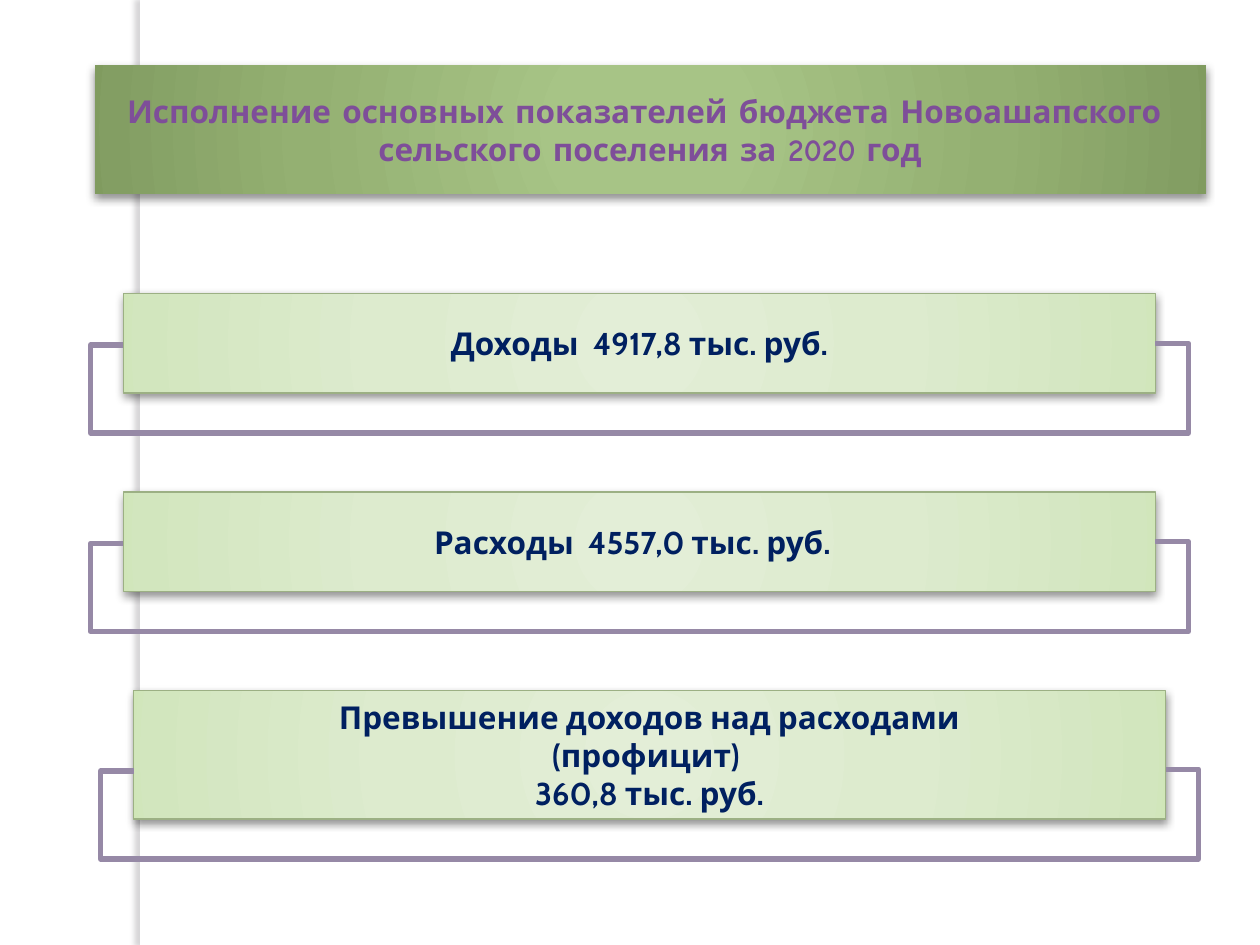
"""Build the budget execution slide: a title banner and three linked figure bars."""
from lxml.etree import SubElement
from pptx import Presentation
from pptx.dml.color import RGBColor
from pptx.enum.shapes import MSO_CONNECTOR, MSO_SHAPE
from pptx.enum.text import MSO_ANCHOR, PP_ALIGN
from pptx.oxml import parse_xml
from pptx.oxml.ns import nsdecls, qn
from pptx.util import Inches, Pt


def color(value):
    return RGBColor.from_string(value)


def add_panel(box, stops, shadow, lines=(), font_name=None, font_color=None, border=None):
    left, top, width, height = box
    shape = slide.shapes.add_shape(
        MSO_SHAPE.RECTANGLE, int(left * column), int(top * row), int(width * column), int(height * row))
    shape.fill.background()
    properties = shape._element.spPr
    gradient = "".join(
        f'<a:gs pos="{position * 1000}"><a:srgbClr val="{value}"/></a:gs>' for position, value in stops)
    properties.replace(properties.find(qn("a:noFill")), parse_xml(
        f'<a:gradFill {nsdecls("a")} rotWithShape="1"><a:gsLst>{gradient}</a:gsLst><a:path path="circle">'
        '<a:fillToRect l="50000" t="50000" r="50000" b="50000"/></a:path></a:gradFill>'))
    if border:
        shape.line.color.rgb = color(border)
        shape.line.width = Pt(0.75)
    else:
        shape.line.fill.background()
    shape.shadow.inherit = False
    shade, alpha, blur, distance, angle = shadow
    properties.find(qn("a:effectLst")).append(parse_xml(
        f'<a:outerShdw {nsdecls("a")} blurRad="{Pt(blur)}" dist="{Pt(distance)}" dir="{angle * 60000}" '
        f'algn="ctr" rotWithShape="0"><a:srgbClr val="{shade}"><a:alpha val="{alpha * 1000}"/>'
        '</a:srgbClr></a:outerShdw>'))
    frame = shape.text_frame
    frame.word_wrap = True
    frame.vertical_anchor = MSO_ANCHOR.MIDDLE
    for index, line in enumerate(lines):
        paragraph = frame.add_paragraph() if index else frame.paragraphs[0]
        paragraph.text = line
        paragraph.alignment = PP_ALIGN.CENTER
        paragraph.font.name = font_name
        paragraph.font.size = Pt(18)
        paragraph.font.bold = True
        paragraph.font.color.rgb = color(font_color)


presentation = Presentation()
presentation.slide_width, presentation.slide_height = Inches(10), Inches(7.5)
column = presentation.slide_width / 100
row = presentation.slide_height / 100
slide = presentation.slides.add_slide(presentation.slide_layouts[6])

panel_shadow = ("000000", 43, 5, 2, 90)
title_stops = [(0, "A8C586"), (15, "A7C486"), (62, "94B072"), (97, "839E63"), (100, "809B5F")]
bar_stops = [(0, "E3EED7"), (50, "DDEBCE"), (97, "D2E6BE"), (100, "D0E6B8")]

add_panel((11.1, 0, 0.8, 100), [(0, "FFFFFF"), (100, "FFFFFF")], ("646068", 25, 3, 3, 180))
add_panel((7.5, 6.93, 88.2, 13.6), title_stops, panel_shadow,
          ["Исполнение основных показателей бюджета Новоашапского ", "сельского поселения за 2020 год"],
          "Comic Neue", "7E4E99")

bars = [
    (9.8, 10.53, ["Доходы  4917,8 тыс. руб."]),
    (9.8, 10.53, ["Расходы  4557,0 тыс. руб.  "]),
    (10.6, 13.6, ["Превышение доходов над расходами", "(профицит) ", "360,8 тыс. руб."]),
]
first_top, pitch, bar_width = 31.07, 21, 81.9
rise, drop, overhang = 0.2, 9.33, 2.6
bends = [-overhang / bar_width, -drop / rise, 1 + overhang / bar_width]

for index, (left, height, lines) in enumerate(bars):
    top = first_top + index * pitch
    add_panel((left, top, bar_width, height), bar_stops, panel_shadow, lines, "Cabin", "002060", "9CB084")
    start = top + height - 5.07
    loop = slide.shapes.add_connector(
        MSO_CONNECTOR.ELBOW, int(left * column), int(start * row),
        int((left + bar_width) * column), int((start - rise) * row))
    loop.line.color.rgb = color("9689A6")
    loop.line.width = Pt(3)
    properties = loop._element.spPr
    SubElement(properties, qn("a:effectLst"))
    geometry = properties.find(qn("a:prstGeom"))
    geometry.set("prst", "bentConnector5")
    guides = geometry.find(qn("a:avLst"))
    for number, bend in enumerate(bends, 1):
        SubElement(guides, qn("a:gd"), name=f"adj{number}", fmla=f"val {round(bend * 100000)}")

presentation.save("out.pptx")
